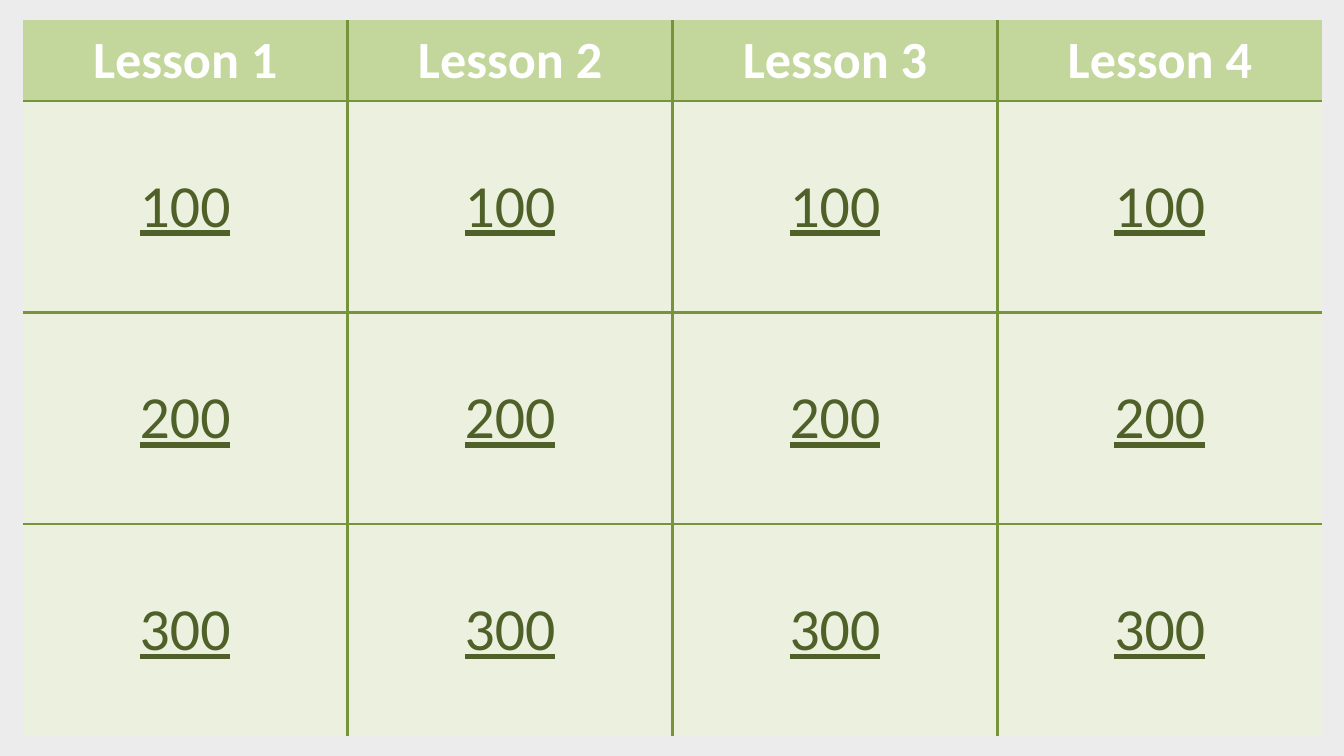
from lxml import etree
from pptx import Presentation
from pptx.dml.color import RGBColor
from pptx.enum import text
from pptx.oxml import ns
from pptx.util import Cm, Pt

HEADS = [f"Lesson {n}" for n in range(1, 5)]
POINTS = ["100", "200", "300"]
ROWS = [HEADS] + [[score] * len(HEADS) for score in POINTS]
HUES = {
    "back": "ECECEC", "head": "C3D69B", "body": "EBF1DE",
    "line": "77933C", "title": "FFFFFF", "score": "4F6128",
}
LEFT, TOP, WIDE = 0.43, 0.38, 6.14
HEAD_HIGH, BODY_HIGH = 1.53, 4


def hue(name):
    return RGBColor.from_string(HUES[name])


def edge(cell, side, shown):
    props = cell._tc.get_or_add_tcPr()
    line = etree.SubElement(props, ns.qn(f"a:ln{side}"), w=str(Pt(1.5)))
    if shown:
        fill = etree.SubElement(line, ns.qn("a:solidFill"))
        etree.SubElement(fill, ns.qn("a:srgbClr"), val=HUES["line"])
    else:
        etree.SubElement(line, ns.qn("a:noFill"))


def write(cell, words, head):
    cell.vertical_anchor = text.MSO_ANCHOR.MIDDLE
    para = cell.text_frame.paragraphs[0]
    para.alignment = text.PP_ALIGN.CENTER
    run = para.add_run()
    run.text = words
    font = run.font
    font.name = "Calibri"
    font.size = Pt(28 if head else 32)
    font.bold = head
    font.underline = not head
    font.color.rgb = hue("title" if head else "score")


def main():
    """Build the quiz board slide."""
    deck = Presentation()
    deck.slide_width, deck.slide_height = Cm(25.4), Cm(14.29)
    slide = deck.slides.add_slide(deck.slide_layouts[6])
    slide.background.fill.solid()
    slide.background.fill.fore_color.rgb = hue("back")

    rows, cols = len(ROWS), len(HEADS)
    high = HEAD_HIGH + BODY_HIGH * len(POINTS)
    board = slide.shapes.add_table(
        rows, cols, Cm(LEFT), Cm(TOP), Cm(WIDE * cols), Cm(high)).table
    for col in board.columns:
        col.width = Cm(WIDE)
    for r, row in enumerate(ROWS):
        head = r == 0
        board.rows[r].height = Cm(HEAD_HIGH if head else BODY_HIGH)
        for c, words in enumerate(row):
            cell = board.cell(r, c)
            inner = {"L": c > 0, "R": c < cols - 1, "T": r > 0, "B": r < rows - 1}
            for side, shown in inner.items():
                edge(cell, side, shown)
            cell.fill.solid()
            cell.fill.fore_color.rgb = hue("head" if head else "body")
            write(cell, words, head)
    deck.save("out.pptx")


if __name__ == "__main__":
    main()
